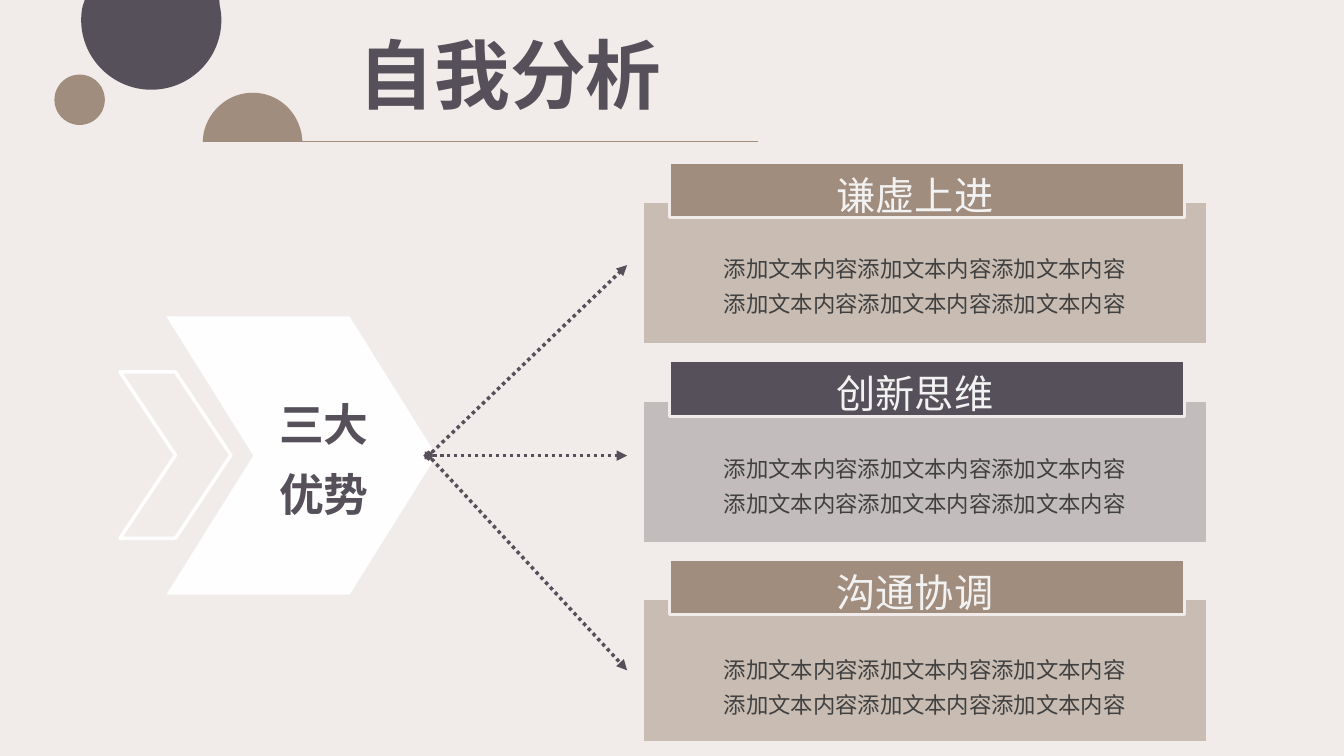
from lxml import etree
from pptx import Presentation
from pptx import util as u
from pptx.dml.color import RGBColor
from pptx.enum import dml, shapes, text
from pptx.oxml import ns

COLOURS = {
    "paper": "F1ECE9",
    "plum": "56505A",
    "tan": "A08D7E",
    "white": "FEFEFE",
    "heading": "F2F2F2",
    "body": "404040",
}
RGB = {name: RGBColor.from_string(value) for name, value in COLOURS.items()}
CJK = "Noto Sans CJK SC"

deck = Presentation()
deck.slide_width, deck.slide_height = u.Inches(13.33), u.Inches(7.5)
column, row = deck.slide_width / 1333, deck.slide_height / 750
page = deck.slides.add_slide(deck.slide_layouts[5])
page.background.fill.solid()
page.background.fill.fore_color.rgb = RGB["paper"]


def paint(shape, fill=None, line=None, width=2, alpha=None):
    shape.shadow.inherit = False
    if fill:
        shape.fill.solid()
        shape.fill.fore_color.rgb = RGB[fill]
    else:
        shape.fill.background()
    if alpha:
        colour = shape.fill._xPr.find(".//" + ns.qn("a:srgbClr"))
        etree.SubElement(colour, ns.qn("a:alpha"), val=str(alpha * 1000))
    if line:
        shape.line.color.rgb = RGB[line]
        shape.line.width = u.Pt(width)
    else:
        shape.line.fill.background()


def write(box, lines, size, colour, font="Calibri", bold=False, spacing=1.3, wrap=True):
    frame = box.text_frame
    frame.text = "\n".join(lines)
    frame.word_wrap = wrap
    frame.auto_size = text.MSO_AUTO_SIZE.SHAPE_TO_FIT_TEXT
    frame.vertical_anchor = text.MSO_ANCHOR.TOP
    for para in frame.paragraphs:
        para.alignment = text.PP_ALIGN.LEFT
        para.line_spacing = spacing
        para.font.size = u.Pt(size)
        para.font.bold = bold
        para.font.color.rgb = RGB[colour]
        para.font.name = font
        etree.SubElement(para.font._rPr, ns.qn("a:ea"), typeface=CJK)


for fill, straight, curved in [
    (
        "plum",
        [(217.5, 0), (84, 0), (82, 6)],
        [(81, 10), (80.5, 15), (80.5, 20), (80.5, 58), (112, 89), (150, 89),
         (188.5, 89), (219.5, 58), (219.5, 20), (219.5, 15), (219, 10), (218, 6)],
    ),
    (
        "tan",
        [(202, 132), (201, 140), (300, 140), (299, 132)],
        [(294, 109), (275, 92), (250.5, 92), (227, 92), (207, 109), (202, 132)],
    ),
]:
    points = [(x * column, y * row) for x, y in straight + curved]
    builder = page.shapes.build_freeform(*points[0])
    builder.add_line_segments(points[1:], close=True)
    disc = builder.convert_to_shape()
    paint(disc, fill)
    steps = list(disc._element.iter(ns.qn("a:lnTo")))[len(straight) - 1:][:len(curved)]
    for first in range(0, len(curved), 3):
        curve = etree.Element(ns.qn("a:cubicBezTo"))
        steps[first].addprevious(curve)
        for step in steps[first:first + 3]:
            curve.append(step[0])
            step.getparent().remove(step)

dot = page.shapes.add_shape(shapes.MSO_SHAPE.OVAL, 54 * column, 74 * row, 50 * column, 50 * row)
paint(dot, "tan")

title = page.shapes.title
title.left, title.top = round(346 * column), round(23 * row)
title.width, title.height = round(325 * column), round(101 * row)
write(title, ["自我分析"], 54, "plum", CJK, bold=True, spacing=1, wrap=False)

for left, top, width, height, point, fill, line in [
    (165, 314, 268, 276, 0.322, "white", None),
    (119, 369, 110, 165, 0.5, None, "white"),
]:
    chevron = page.shapes.add_shape(
        shapes.MSO_SHAPE.CHEVRON, left * column, top * row, width * column, height * row
    )
    chevron.adjustments[0] = point
    paint(chevron, fill, line, 2.5)

box = page.shapes.add_textbox(267 * column, 373 * row, 126 * column, 150 * row)
write(box, ["三大", "优势"], 32, "plum", bold=True)

for index, (heading, colour, alpha) in enumerate(
    [("谦虚上进", "tan", 50), ("创新思维", "plum", 30), ("沟通协调", "tan", 50)]
):
    top = 161 + 197 * index
    for kind, left, offset, width, height, opacity in [
        (shapes.MSO_SHAPE.ROUNDED_RECTANGLE, 637, 39, 561, 142, alpha),
        (shapes.MSO_SHAPE.HEXAGON, 664, 0, 511, 55, None),
    ]:
        panel = page.shapes.add_shape(
            kind, left * column, (top + offset) * row, width * column, height * row
        )
        panel.adjustments[0] = 0
        paint(panel, colour, "paper", alpha=opacity)
    box = page.shapes.add_textbox(820 * column, (top - 10) * row, 236 * column, 66 * row)
    write(box, [heading], 28, "heading")
    box = page.shapes.add_textbox(708 * column, (240 + 199 * index) * row, 425 * column, 80 * row)
    write(box, ["添加文本内容" * 3] * 2, 16, "body")

for start_x, start_y, end_x, end_y, colour, width, arrow in [
    (201, 140, 752, 140, "tan", 0.5, False),
    (425, 452, 622, 263, "plum", 2.5, True),
    (425, 452, 622, 452, "plum", 2.5, True),
    (425, 452, 622, 665, "plum", 2.5, True),
]:
    link = page.shapes.add_connector(
        shapes.MSO_CONNECTOR.STRAIGHT,
        round(start_x * column), round(start_y * row), round(end_x * column), round(end_y * row),
    )
    link.line.color.rgb = RGB[colour]
    link.line.width = u.Pt(width)
    if arrow:
        link.line.dash_style = dml.MSO_LINE.ROUND_DOT
        stroke = link.line._get_or_add_ln()
        etree.SubElement(stroke, ns.qn("a:headEnd"), type="diamond")
        etree.SubElement(stroke, ns.qn("a:tailEnd"), type="triangle")
    etree.SubElement(link._element.spPr, ns.qn("a:effectLst"))

deck.save("out.pptx")
